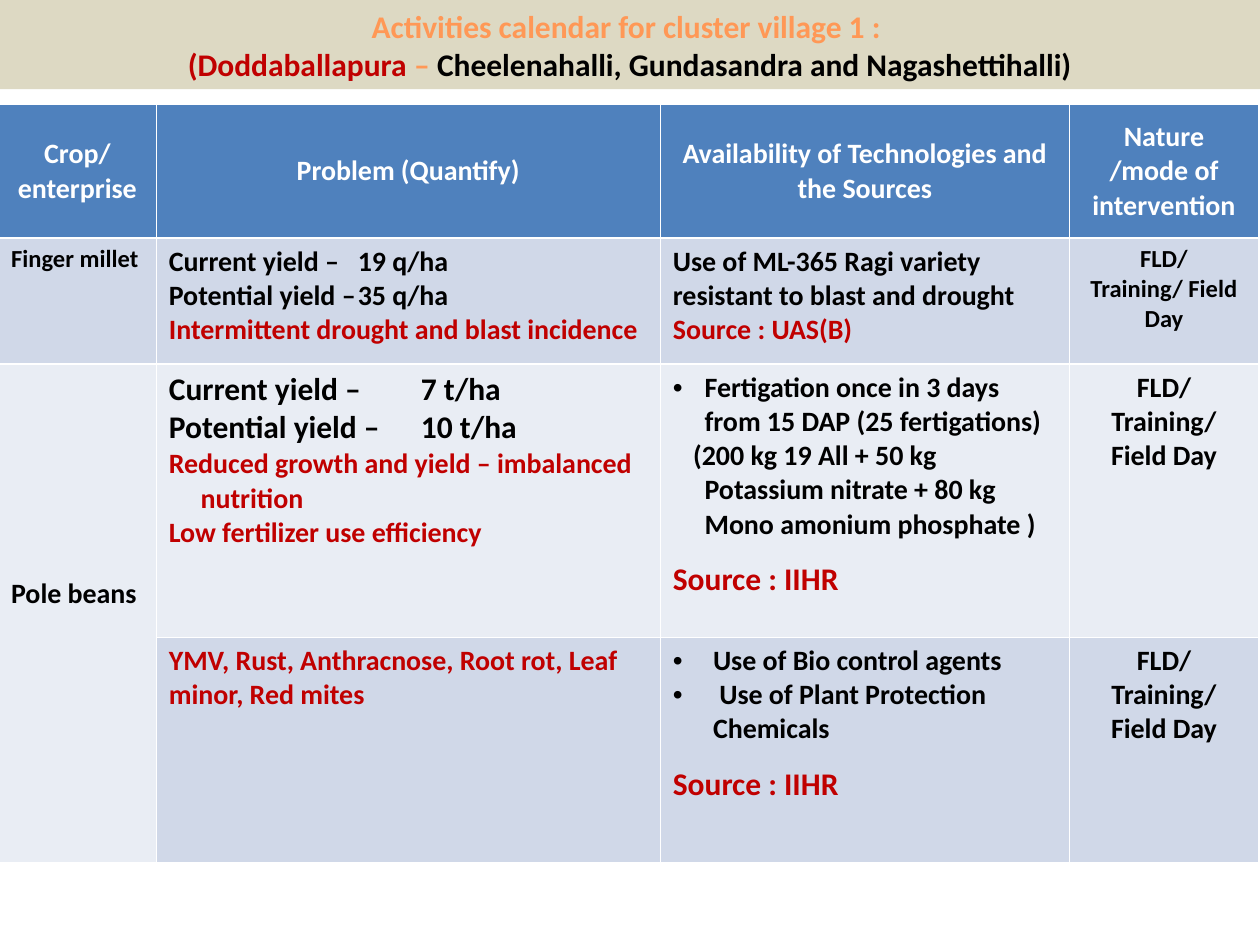
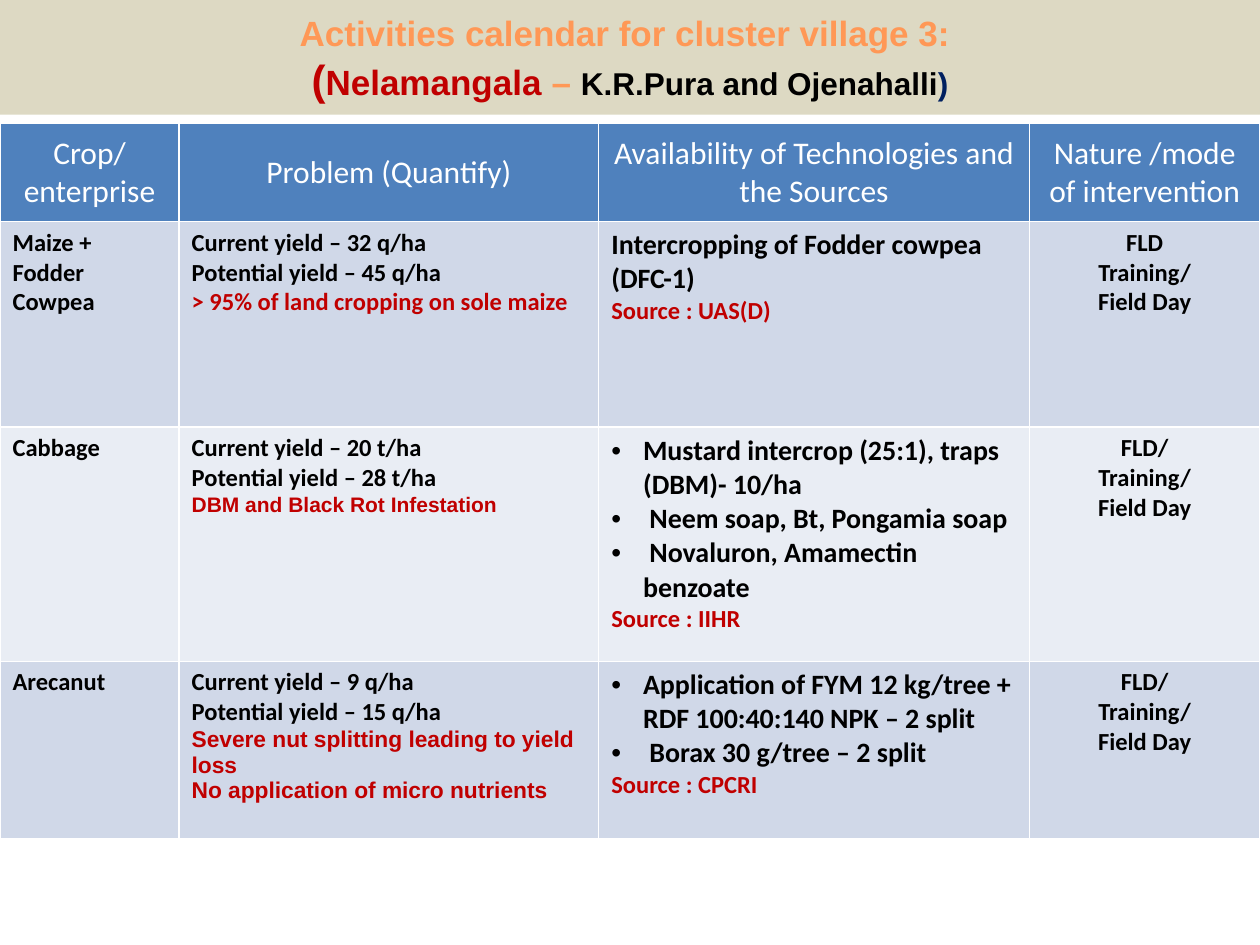
from dataclasses import dataclass
from typing import Optional

from lxml.etree import SubElement
from pptx import Presentation
from pptx.dml.color import RGBColor
from pptx.enum.text import MSO_ANCHOR, MSO_AUTO_SIZE, PP_ALIGN
from pptx.oxml.ns import qn
from pptx.util import Cm, Pt

WHITE = RGBColor(0xFF, 0xFF, 0xFF)
BLACK = RGBColor(0x00, 0x00, 0x00)
RED = RGBColor(0xC0, 0x00, 0x00)
ORANGE = RGBColor(0xFF, 0x98, 0x56)
NAVY = RGBColor(0x00, 0x20, 0x60)
SAND = RGBColor(0xDD, 0xD9, 0xC3)
HEADER_BLUE = RGBColor(0x4F, 0x81, 0xBD)
BAND_FILLS = (RGBColor(0xD0, 0xD8, 0xE8), RGBColor(0xE9, 0xED, 0xF4))

PAGE_WIDTH = 25.4
PAGE_HEIGHT = 19.05
HEADINGS = (
    "Crop/ enterprise",
    "Problem (Quantify)",
    "Availability of Technologies and the Sources",
    "Nature /mode of intervention",
)


@dataclass
class Line:
    text: str
    size: int
    color: RGBColor = BLACK
    font: str = "Calibri"
    bold: bool = True
    align: PP_ALIGN = PP_ALIGN.LEFT
    margin: float = 0
    first: float = 0
    bullet: bool = False
    tab: Optional[float] = None
    spacing: float = 1.0


def bullet(text, size=16, margin=0.64):
    return Line(text, size, margin=margin, first=-margin, bullet=True)


def hanging(text, size, color=RED, font="Calibri", first=-0.64):
    return Line(text, size, color, font, margin=0.64, first=first)


def centred(size, *texts):
    return [Line(text, size, align=PP_ALIGN.CENTER) for text in texts]


def source(name, size, spacing=1.0):
    return Line(f"Source : {name}", size, RED, spacing=spacing)


def yields(current, potential, size=14, tabs=(None, None)):
    gaps = ["\t" if tab else " " for tab in tabs]
    return [
        Line(f"Current yield –{gaps[0]}{current}", size, tab=tabs[0]),
        Line(f"Potential yield –{gaps[1]}{potential}", size, tab=tabs[1]),
    ]


def add_span(para, text, size, color, font, bold=True):
    span = para.add_run()
    span.text = text
    span.font.size = Pt(size)
    span.font.name = font
    span.font.bold = bold
    span.font.color.rgb = color


def set_indents(para, line):
    properties = para._p.get_or_add_pPr()
    properties.set("marL", str(Cm(line.margin)))
    properties.set("indent", str(Cm(line.first)))
    if line.bullet:
        SubElement(properties, qn("a:buFont"), typeface="Arial")
        SubElement(properties, qn("a:buChar"), char="•")
    if line.tab:
        stops = SubElement(properties, qn("a:tabLst"))
        SubElement(stops, qn("a:tab"), pos=str(Cm(line.tab)), algn="l")


def paragraphs(frame, count):
    return [frame.paragraphs[0]] + [frame.add_paragraph() for _ in range(count - 1)]


def fill_cell(cell, lines, fill):
    cell.fill.solid()
    cell.fill.fore_color.rgb = fill
    for para, line in zip(paragraphs(cell.text_frame, len(lines)), lines):
        set_indents(para, line)
        para.alignment = line.align
        para.line_spacing = line.spacing
        add_span(para, line.text, line.size, line.color, line.font, line.bold)


def add_title(page, height, font, title_lines):
    title = page.shapes.title
    title.left, title.top = Cm(0), Cm(0)
    title.width, title.height = Cm(PAGE_WIDTH), Cm(height)
    title.fill.solid()
    title.fill.fore_color.rgb = SAND
    frame = title.text_frame
    frame.word_wrap = True
    frame.auto_size = MSO_AUTO_SIZE.NONE
    frame.vertical_anchor = MSO_ANCHOR.MIDDLE
    for para, spans in zip(paragraphs(frame, len(title_lines)), title_lines):
        para.alignment = PP_ALIGN.CENTER
        for text, size, color in spans:
            add_span(para, text, size, color, font)


def add_calendar(page, left, top, widths, heights, heading_size, heading_bold, rows):
    frame = page.shapes.add_table(
        len(heights), len(widths), Cm(left), Cm(top), Cm(sum(widths)), Cm(sum(heights))
    )
    table = frame.table
    for column, width in zip(table.columns, widths):
        column.width = Cm(width)
    for row, height in zip(table.rows, heights):
        row.height = Cm(height)
    for column, heading in enumerate(HEADINGS):
        cell = table.cell(0, column)
        cell.vertical_anchor = MSO_ANCHOR.MIDDLE
        line = Line(heading, heading_size, WHITE, bold=heading_bold, align=PP_ALIGN.CENTER)
        fill_cell(cell, [line], HEADER_BLUE)
    for index, row in enumerate(rows):
        for column, lines in enumerate(row):
            if lines:
                fill_cell(table.cell(index + 1, column), lines, BAND_FILLS[index % 2])
    return table


def build_doddaballapura(deck):
    page = deck.slides.add_slide(deck.slide_layouts[5])
    add_title(page, 1.8, "Calibri", [
        [("Activities calendar for cluster village 1 : ", 18, ORANGE)],
        [
            ("(Doddaballapura ", 18, RED),
            ("– ", 18, ORANGE),
            ("Cheelenahalli, Gundasandra and Nagashettihalli)", 18, BLACK),
        ],
    ])
    rows = [
        [
            [Line("Finger millet", 14)],
            yields("19 q/ha", "35 q/ha", 16, (3.81, 4.15))
            + [Line("Intermittent drought and blast incidence", 16, RED)],
            [
                Line("Use of ML-365 Ragi variety resistant to blast and drought", 16),
                source("UAS(B)", 16),
            ],
            centred(14, "FLD/", "Training/ Field Day"),
        ],
        [
            [Line("Pole beans", 16)],
            yields("7 t/ha", "10 t/ha", 18, (4.31, 4.69))
            + [
                hanging("Reduced growth and yield – imbalanced nutrition", 16),
                hanging("Low fertilizer use efficiency", 16),
            ],
            [
                bullet("Fertigation once in 3 days from 15 DAP (25 fertigations)"),
                hanging(
                    "(200 kg 19 All + 50 kg Potassium nitrate + 80 kg Mono amonium phosphate )",
                    16, BLACK, first=-0.23,
                ),
                source("IIHR", 18, 1.5),
            ],
            centred(16, "FLD/", "Training/ Field Day"),
        ],
        [
            None,
            [Line("YMV, Rust, Anthracnose, Root rot, Leaf minor, Red mites", 16, RED)],
            [
                bullet("Use of Bio control agents", margin=0.81),
                bullet(" Use of Plant Protection Chemicals", margin=0.81),
                source("IIHR", 18, 1.5),
            ],
            centred(16, "FLD/", "Training/ Field Day"),
        ],
    ]
    table = add_calendar(
        page, -0.03, 2.11, (3.18, 10.16, 8.25, 3.81), (2.69, 2.54, 5.51, 4.55),
        16, True, rows,
    )
    pole_beans = table.cell(2, 0)
    pole_beans.merge(table.cell(3, 0))
    pole_beans.vertical_anchor = MSO_ANCHOR.MIDDLE
    pole_beans.margin_bottom = Cm(0.94)


def build_nelamangala(deck):
    page = deck.slides.add_slide(deck.slide_layouts[5])
    add_title(page, 2.31, "Arial", [
        [("Activities calendar for cluster village 3: ", 20, ORANGE)],
        [
            ("(", 24, RED),
            ("Nelamangala", 20, RED),
            (" – ", 20, ORANGE),
            ("K.R.Pura and Ojenahalli", 18, BLACK),
            (")", 18, NAVY),
        ],
    ])
    rows = [
        [
            [Line("Maize +", 14), Line("Fodder Cowpea", 14)],
            yields("32 q/ha", "45 q/ha")
            + [Line("> 95% of land cropping on sole maize", 14, RED)],
            [Line("Intercropping of Fodder cowpea (DFC-1)", 16), source("UAS(D)", 14)],
            centred(14, "FLD", "Training/", "Field Day"),
        ],
        [
            [Line("Cabbage", 14)],
            yields("20 t/ha", "28 t/ha")
            + [Line("DBM and Black Rot Infestation", 12, RED, "Arial")],
            [
                bullet("Mustard intercrop (25:1), traps (DBM)- 10/ha"),
                bullet(" Neem soap, Bt, Pongamia soap"),
                bullet(" Novaluron, Amamectin benzoate"),
                source("IIHR", 14),
            ],
            centred(14, "FLD/", "Training/", "Field Day"),
        ],
        [
            [Line("Arecanut", 14)],
            yields("9 q/ha", "15 q/ha")
            + [
                Line("Severe nut splitting leading to yield loss", 13, RED, "Arial"),
                hanging("No application of micro nutrients", 13, font="Arial"),
            ],
            [
                bullet("Application of FYM 12 kg/tree + RDF 100:40:140 NPK – 2 split"),
                bullet(" Borax 30 g/tree – 2 split"),
                source("CPCRI", 14),
            ],
            centred(14, "FLD/", "Training/", "Field Day"),
        ],
    ]
    add_calendar(
        page, 0, 2.49, (3.61, 8.46, 8.68, 4.65), (1.98, 4.14, 4.72, 3.58),
        18, False, rows,
    )


def main():
    deck = Presentation()
    deck.slide_width = Cm(PAGE_WIDTH)
    deck.slide_height = Cm(PAGE_HEIGHT)
    build_doddaballapura(deck)
    build_nelamangala(deck)
    deck.save("out.pptx")


if __name__ == "__main__":
    main()
